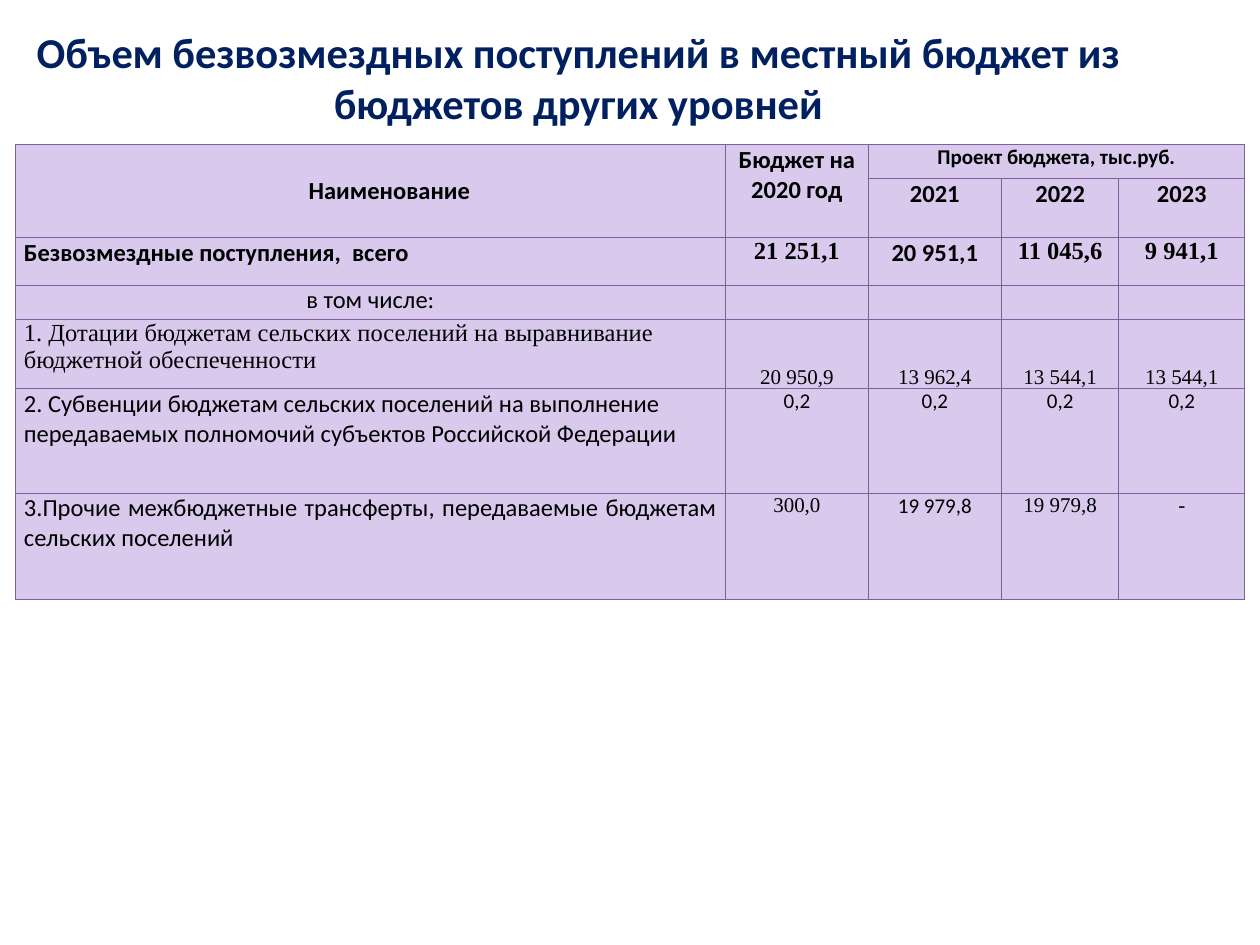
from lxml import etree
from pptx import Presentation
from pptx import util as u
from pptx.dml.color import RGBColor
from pptx.enum import text
from pptx.oxml.ns import qn

NAVY = RGBColor(0x00, 0x20, 0x60)
BLACK = RGBColor(0, 0, 0)
LILAC = RGBColor(0xD9, 0xCA, 0xED)
PURPLE = RGBColor(0x7D, 0x60, 0xA0)
SANS, SERIF = "Calibri", "Times New Roman"
LEFT, CENTER, JUSTIFY = (text.PP_ALIGN.LEFT, text.PP_ALIGN.CENTER,
                         text.PP_ALIGN.JUSTIFY)
TOP, MIDDLE, BOTTOM = (text.MSO_ANCHOR.TOP, text.MSO_ANCHOR.MIDDLE,
                       text.MSO_ANCHOR.BOTTOM)

# Content
TITLE = "Объем безвозмездных поступлений в местный бюджет из бюджетов других уровней"
ROWS = [
    ["Наименование", "Бюджет на 2020 год", "Проект бюджета, тыс.руб.", "", ""],
    ["", "", "2021", "2022", "2023"],
    ["Безвозмездные поступления,  всего", "21 251,1", "20 951,1", "11 045,6", "9 941,1"],
    ["в том числе:", "", "", "", ""],
    ["1. Дотации бюджетам сельских поселений на выравнивание бюджетной обеспеченности",
     "20 950,9", "13 962,4", "13 544,1", "13 544,1"],
    ["2. Субвенции бюджетам сельских поселений на выполнение передаваемых "
     "полномочий субъектов Российской Федерации", "0,2", "0,2", "0,2", "0,2"],
    ["3.Прочие межбюджетные трансферты, передаваемые бюджетам сельских поселений",
     "300,0", "19 979,8", "19 979,8", "-"],
]
COLUMN_WIDTHS = [5.64, 1.13, 1.06, 0.93, 1]
ROW_HEIGHTS = [0.27, 0.28, 0.38, 0.27, 0.55, 0.83, 0.84]
MERGES = [((0, 0), (1, 0)), ((0, 1), (1, 1)), ((0, 2), (0, 4))]

# Formatting rules
TOTAL_ROW, GRANTS_ROW = 2, 4
NAME_ALIGN = [CENTER, CENTER, LEFT, CENTER, LEFT, LEFT, JUSTIFY]
ANCHORS = {0: MIDDLE, GRANTS_ROW: BOTTOM}
SERIF_CELLS = {(2, 1), (2, 3), (2, 4), (6, 1), (6, 3), (6, 4)} | {
    (GRANTS_ROW, col) for col in range(5)}


def style_run(run, size, font, color, bold):
    run.font.size = u.Pt(size)
    run.font.name = font
    run.font.color.rgb = color
    run.font.bold = bold


def add_borders(cell):
    properties = cell._tc.get_or_add_tcPr()
    for position, side in enumerate(("a:lnL", "a:lnR", "a:lnT", "a:lnB")):
        line = etree.Element(qn(side), w=str(u.Pt(0.75)))
        fill = etree.SubElement(line, qn("a:solidFill"))
        etree.SubElement(fill, qn("a:srgbClr"), val=str(PURPLE))
        properties.insert(position, line)


def fill_cell(cell, row, col):
    cell.fill.solid()
    cell.fill.fore_color.rgb = LILAC
    add_borders(cell)
    cell.margin_left = cell.margin_right = u.Inches(0.07)
    cell.margin_top = cell.margin_bottom = 0
    is_name = col == 0
    cell.vertical_anchor = ANCHORS.get(row, TOP) if is_name or row else TOP
    if is_name and row == GRANTS_ROW:
        cell.vertical_anchor = TOP
    cell.text_frame.text = ROWS[row][col]
    paragraph = cell.text_frame.paragraphs[0]
    paragraph.alignment = NAME_ALIGN[row] if is_name else CENTER
    small = (row, col) == (0, 2) or (row >= GRANTS_ROW and not is_name)
    size = 12 if small else 14
    font = SERIF if (row, col) in SERIF_CELLS else SANS
    for run in paragraph.runs:
        style_run(run, size, font, BLACK, row <= TOTAL_ROW)
    if not paragraph.runs:  # keeps empty cells from stretching their row
        paragraph._p.get_or_add_endParaRPr().set("sz", "1200")


prs = Presentation()
prs.slide_width, prs.slide_height = u.Inches(10), u.Inches(7.5)
slide = prs.slides.add_slide(prs.slide_layouts[6])

# Title
title = slide.shapes.add_textbox(*map(u.Inches, (0.09, 0.21, 9, 1.01))).text_frame
title.word_wrap = True
title.margin_top = title.margin_bottom = 0
title.text = TITLE
title.paragraphs[0].alignment = CENTER
style_run(title.paragraphs[0].runs[0], 24.3, SANS, NAVY, True)

# Budget table
budget = slide.shapes.add_table(
    len(ROWS), len(COLUMN_WIDTHS), u.Inches(0.12), u.Inches(1.15),
    u.Inches(sum(COLUMN_WIDTHS)), u.Inches(sum(ROW_HEIGHTS))).table
budget.first_row = budget.horz_banding = False
for column, width in zip(budget.columns, COLUMN_WIDTHS):
    column.width = u.Inches(width)
for table_row, height in zip(budget.rows, ROW_HEIGHTS):
    table_row.height = u.Inches(height)
for row in range(len(ROWS)):
    for col in range(len(COLUMN_WIDTHS)):
        fill_cell(budget.cell(row, col), row, col)
for first, last in MERGES:
    budget.cell(*first).merge(budget.cell(*last))

# First-line indent of the name heading
heading = budget.cell(0, 0).text_frame.paragraphs[0]
heading._p.get_or_add_pPr().set("indent", str(u.Inches(0.3)))

prs.save("out.pptx")
